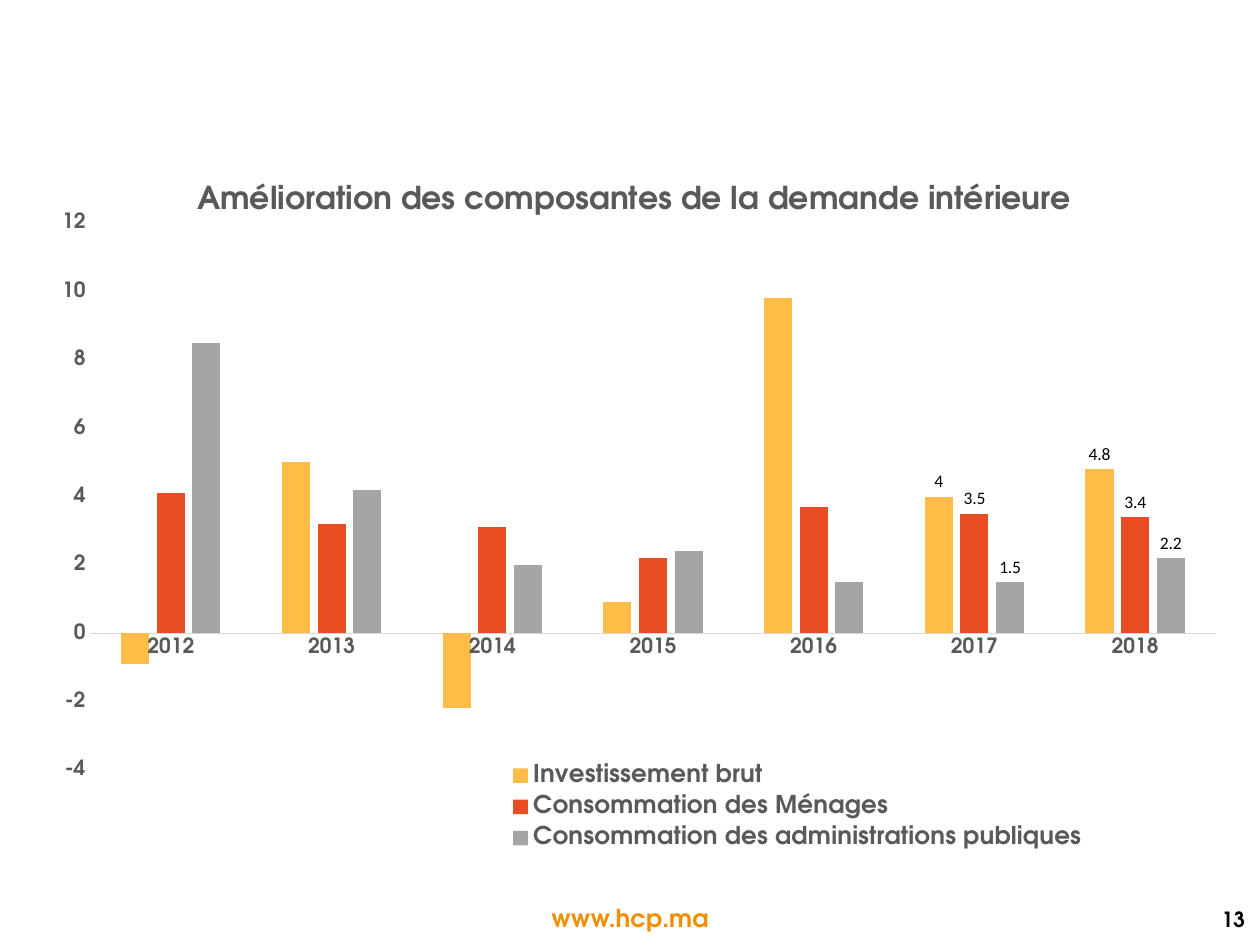
from lxml import etree
from pptx import Presentation
from pptx import util as u
from pptx.chart.data import CategoryChartData
from pptx.dml.color import RGBColor
from pptx.enum import chart as charts, text
from pptx.oxml.ns import qn

FONT = "TeX Gyre Adventor"
COLOURS = {
    "grey": "595959", "axis": "D9D9D9", "link": "F18E00", "black": "000000",
    "investment": "FFBD47", "households": "E84C22", "government": "A5A5A5",
}
YEARS = [str(year) for year in range(2012, 2019)]
LABELLED_YEARS = ("2017", "2018")
SERIES = [
    ("Investissement brut", "investment", (-0.9, 5, -2.2, 0.9, 9.8, 4, 4.8)),
    ("Consommation des Ménages", "households", (4.1, 3.2, 3.1, 2.2, 3.7, 3.5, 3.4)),
    ("Consommation des administrations publiques", "government",
     (8.5, 4.2, 2, 2.4, 1.5, 1.5, 2.2)),
]


def colour(name):
    return RGBColor.from_string(COLOURS[name])


def style_font(font, size, colour_name, bold=True, name=FONT):
    values = {"size": u.Pt(size), "bold": bold, "name": name}
    for key, value in values.items():
        setattr(font, key, value)
    font.color.rgb = colour(colour_name)


def add_text(page, place, words, size, colour_name, align, anchor):
    box = page.shapes.add_textbox(*map(u.Inches, place))
    frame = box.text_frame
    frame.word_wrap = True
    frame.vertical_anchor = anchor
    para = frame.paragraphs[0]
    para.alignment = align
    span = para.add_run()
    span.text = words
    style_font(span.font, size, colour_name)


def set_layout(element, inner=False, **fractions):
    """Place a chart part by fractions of the chart's width and height."""
    for old in element.findall(qn("c:layout")):
        element.remove(old)
    layout = etree.Element(qn("c:layout"))
    manual = etree.SubElement(layout, qn("c:manualLayout"))
    values = {"layoutTarget": "inner"} if inner else {}
    values.update(xMode="edge", yMode="edge", **fractions)
    for key, value in values.items():
        etree.SubElement(manual, qn("c:" + key)).set("val", str(value))
    before = [element.find(qn("c:" + tag)) for tag in ("tx", "legendPos")]
    found = [item for item in before if item is not None]
    if found:
        found[0].addnext(layout)
    else:
        element.insert(0, layout)


def style_axis(axis):
    values = {
        "has_major_gridlines": False,
        "major_tick_mark": charts.XL_TICK_MARK.NONE,
        "minor_tick_mark": charts.XL_TICK_MARK.NONE,
    }
    for key, value in values.items():
        setattr(axis, key, value)
    style_font(axis.tick_labels.font, 12, "grey")


def style_series(series, colour_name):
    series.smooth = False if hasattr(series, "smooth") else None
    series.invert_if_negative = False
    series.format.fill.solid()
    series.format.fill.fore_color.rgb = colour(colour_name)
    series.data_labels.show_value = False
    for year in LABELLED_YEARS:
        label = series.points[YEARS.index(year)].data_label
        style_font(label.font, 10, "black", bold=False, name=None)
        label.position = charts.XL_LABEL_POSITION.OUTSIDE_END


def add_demand_chart(page, place):
    data = CategoryChartData()
    data.categories = YEARS
    for name, _, values in SERIES:
        data.add_series(name, values)
    chart = page.shapes.add_chart(
        charts.XL_CHART_TYPE.COLUMN_CLUSTERED, *map(u.Inches, place), data).chart
    style_font(chart.font, 10, "black", bold=False, name=None)

    # Title
    frame = chart.chart_title.text_frame
    frame.text = "Amélioration des composantes de la demande intérieure"
    style_font(frame.paragraphs[0].runs[0].font, 18, "grey")
    set_layout(chart.chart_title._element, x=0.13, y=0.03)

    # Columns
    plot = chart.plots[0]
    for key, value in {"gap_width": 219, "overlap": -27,
                       "vary_by_categories": False}.items():
        setattr(plot, key, value)
    for series, (_, colour_name, _) in zip(plot.series, SERIES):
        style_series(series, colour_name)
    set_layout(chart._chartSpace.chart.plotArea, inner=True,
               x=0.046, y=0.094, w=0.937, h=0.755)

    # Axes
    for axis in (chart.category_axis, chart.value_axis):
        style_axis(axis)
    chart.category_axis.format.line.color.rgb = colour("axis")
    chart.category_axis.format.line.width = u.Pt(0.75)
    scale = chart.value_axis
    scale.minimum_scale, scale.maximum_scale, scale.major_unit = -4, 12, 2
    scale.format.line.fill.background()
    scale.tick_labels.number_format = "General"
    scale.tick_labels.number_format_is_linked = False

    # Legend
    chart.has_legend = True
    legend = chart.legend
    legend.position = charts.XL_LEGEND_POSITION.BOTTOM
    legend.include_in_layout = False
    style_font(legend.font, 14, "grey")
    set_layout(legend._element, x=0.39, y=0.83, w=0.49, h=0.14)


def main():
    deck = Presentation()
    deck.slide_width, deck.slide_height = u.Inches(10), u.Inches(7.5)
    page = deck.slides.add_slide(deck.slide_layouts[6])
    add_demand_chart(page, (0.28, 1.23, 9.53, 5.75))
    # Footer
    add_text(page, (3.82, 7.12, 2.36, 0.33), "www.hcp.ma", 14, "link",
             text.PP_ALIGN.CENTER, text.MSO_ANCHOR.TOP)
    add_text(page, (8.46, 7.12, 1.52, 0.35), "13", 12, "black",
             text.PP_ALIGN.RIGHT, text.MSO_ANCHOR.MIDDLE)
    deck.save("out.pptx")


if __name__ == "__main__":
    main()
